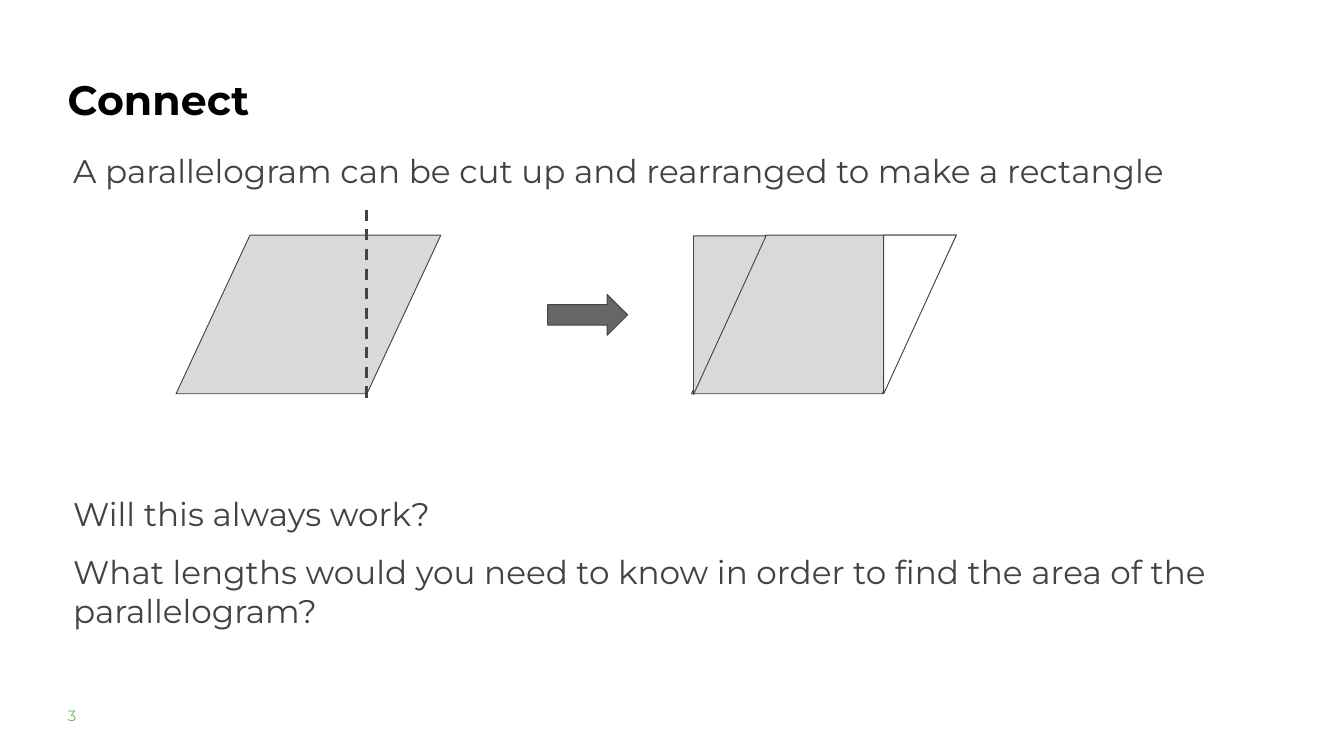
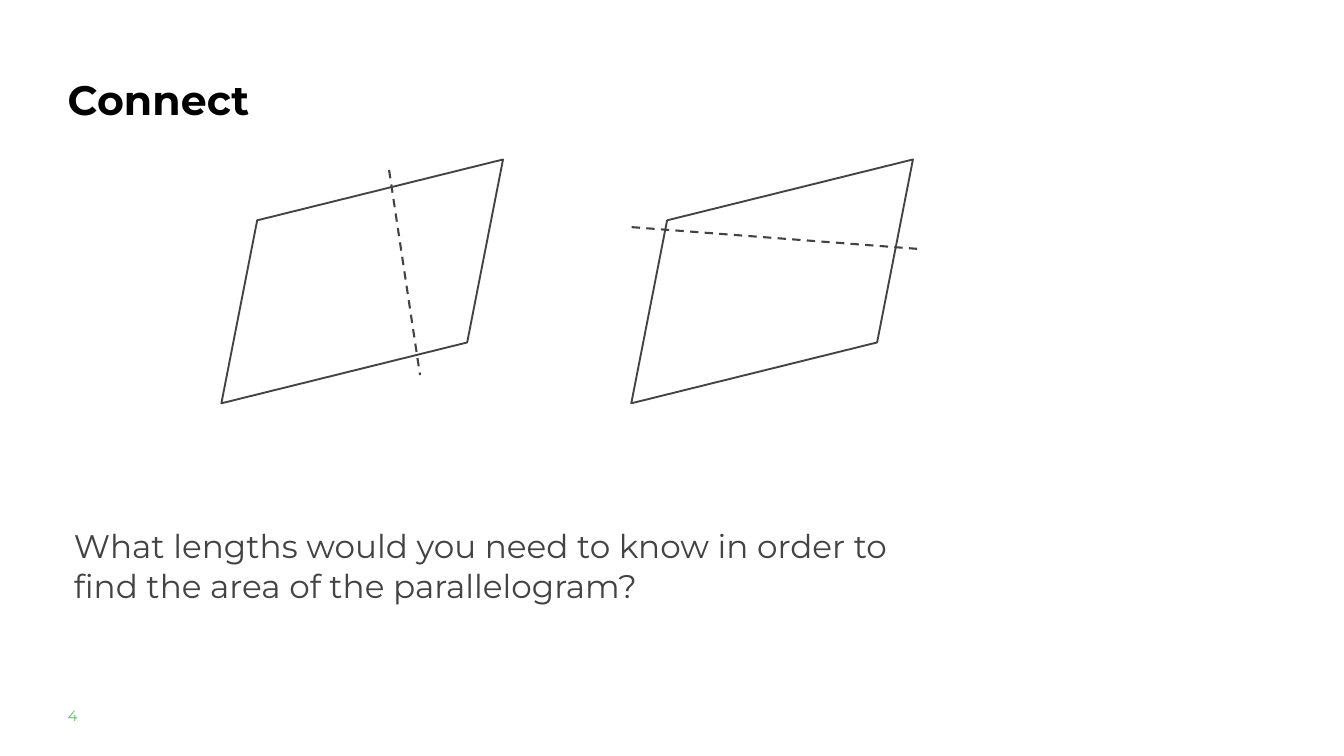
"""Build two lesson slides about the area of a parallelogram."""
import dataclasses

import lxml.etree
import pptx
import pptx.dml.color
import pptx.enum.dml
import pptx.enum.shapes
import pptx.oxml.ns
import pptx.util


@dataclasses.dataclass(frozen=True)
class Theme:
    font: str = "Montserrat"
    heading: str = "000000"
    ink: str = "434343"
    number: str = "65BE4B"
    shaded: str = "D9D9D9"
    arrow: str = "666666"
    blank: str = "FFFFFF"
    heading_size: int = 44
    body_size: int = 35
    number_size: int = 16
    body_gap: int = 20
    loose_spacing: float = 1.3


theme = Theme()
rgb = pptx.dml.color.RGBColor.from_string
shapes = pptx.enum.shapes.MSO_SHAPE
lesson = pptx.Presentation()
lesson.slide_width = pptx.util.Inches(20)
lesson.slide_height = pptx.util.Inches(11.25)
column = lesson.slide_width / 80
row = lesson.slide_height / 45
left_margin = 3.64
text_margin = 3.96
slant = 0.466


def add_text(slide, area, lines, size, color, bold=False, spacing=None):
    x, y, width, height = area
    box = slide.shapes.add_textbox(
        round(x * column), round(y * row), round(width * column), round(height * row))
    frame = box.text_frame
    frame.word_wrap = True
    frame.text = "\n".join(lines)
    for index, paragraph in enumerate(frame.paragraphs):
        paragraph.font.name = theme.font
        paragraph.font.size = pptx.util.Pt(size)
        paragraph.font.bold = bold
        paragraph.font.color.rgb = rgb(color)
        if spacing:
            paragraph.line_spacing = spacing
        if index:
            paragraph.space_before = pptx.util.Pt(theme.body_gap)


def add_figure(slide, preset, area, fill, weight=1, rotation=0, adjustment=None):
    x, y, width, height = area
    figure = slide.shapes.add_shape(
        preset, round(x * column), round(y * row), round(width * column), round(height * row))
    figure.shadow.inherit = False
    figure.fill.solid()
    figure.fill.fore_color.rgb = rgb(fill)
    figure.line.color.rgb = rgb(theme.ink)
    figure.line.width = pptx.util.Pt(weight)
    figure.rotation = rotation
    if adjustment is not None:
        figure.adjustments[0] = adjustment


pages = []
for page_number in (3, 4):
    page = lesson.slides.add_slide(lesson.slide_layouts[6])
    add_text(page, (left_margin, 3.36, 15.84, 3.92), ["Connect"],
             theme.heading_size, theme.heading, True, theme.loose_spacing)
    add_text(page, (left_margin, 41.52, 3.56, 1.68), [str(page_number)],
             theme.number_size, theme.number, False, theme.loose_spacing)
    pages.append(page)
rearranging, other_cuts = pages
question = "What lengths would you need to know in order to find the area of the parallelogram?"

base_top, base_width, base_height = 14, 15.76, 9.44
before_left, after_left = 10.48, 41.16
piece_width = 4.32
for base_left in (before_left, after_left):
    add_figure(rearranging, shapes.PARALLELOGRAM,
               (base_left, base_top, base_width, base_height),
               theme.shaded, adjustment=slant)
add_figure(rearranging, shapes.RIGHT_ARROW, (32.6, 17.52, 4.76, 2.44), theme.arrow)
moved_piece = (after_left + 0.12, base_top + 0.04, theme.shaded)
vacated_piece = (after_left + base_width - piece_width, base_top, theme.blank)
for piece_left, piece_top, piece_fill in (moved_piece, vacated_piece):
    add_figure(rearranging, shapes.ISOSCELES_TRIANGLE,
               (piece_left, piece_top, piece_width, base_height),
               piece_fill, rotation=180, adjustment=1)
add_text(rearranging, (text_margin, 8.76, 66.72, 2.76),
         ["A parallelogram can be cut up and rearranged to make a rectangle"],
         theme.body_size, theme.ink)
add_text(rearranging, (text_margin, 29.2, 74.36, 8.6),
         ["Will this always work?", question], theme.body_size, theme.ink)

tilted_left, tilted_step = 11.68, 24.4
for position in range(2):
    add_figure(other_cuts, shapes.PARALLELOGRAM,
               (tilted_left + position * tilted_step, 11.72, 19.76, 10.06),
               theme.blank, weight=2, rotation=346.1, adjustment=slant)
add_text(other_cuts, (4, 31.12, 52.28, 5.12), [question], theme.body_size, theme.ink)

cuts = [
    (rearranging, (21.8, 12.48), (21.8, 24), 3),
    (other_cuts, (23.16, 10.12), (25, 22.32), 2.25),
    (other_cuts, (37.6, 13.52), (54.96, 14.84), 2.25),
]
for page, start, end, weight in cuts:
    cut = page.shapes.add_connector(
        pptx.enum.shapes.MSO_CONNECTOR.STRAIGHT,
        round(start[0] * column), round(start[1] * row),
        round(end[0] * column), round(end[1] * row))
    cut.line.color.rgb = rgb(theme.ink)
    cut.line.width = pptx.util.Pt(weight)
    cut.line.dash_style = pptx.enum.dml.MSO_LINE.DASH
    lxml.etree.SubElement(cut._element.spPr, pptx.oxml.ns.qn("a:effectLst"))

lesson.save("out.pptx")
